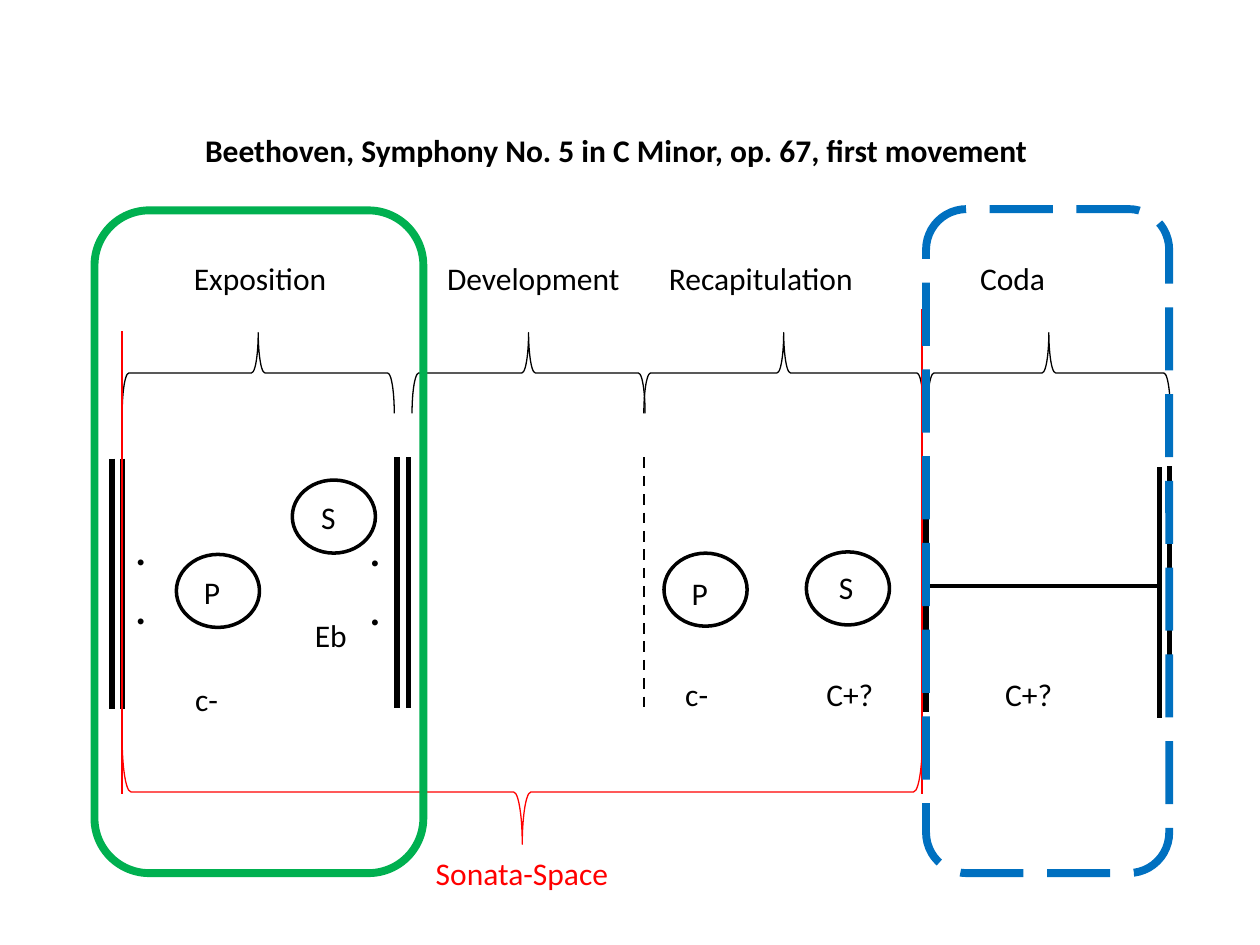
from dataclasses import dataclass

from lxml import etree
from pptx import Presentation
from pptx.dml.color import RGBColor
from pptx.enum.dml import MSO_LINE
from pptx.enum.shapes import MSO_CONNECTOR, MSO_SHAPE
from pptx.oxml.ns import qn
from pptx.util import Inches, Pt

BLACK = RGBColor(0x00, 0x00, 0x00)
RED = RGBColor(0xFF, 0x00, 0x00)
GREEN = RGBColor(0x00, 0xB0, 0x50)
BLUE = RGBColor(0x00, 0x70, 0xC0)
STRAIGHT = MSO_CONNECTOR.STRAIGHT
OVAL = MSO_SHAPE.OVAL
ROUNDED = MSO_SHAPE.ROUNDED_RECTANGLE
BRACE_UP = MSO_SHAPE.RIGHT_BRACE
BRACE_DOWN = MSO_SHAPE.LEFT_BRACE
DASH = MSO_LINE.DASH
LONG_DASH = MSO_LINE.LONG_DASH

FONT = "Calibri"
TEXT_HEIGHT = 0.4
REPEAT_HEIGHT = 1.04
THEME_WIDTH, THEME_HEIGHT = 0.66, 0.58
BRACE_TOP, BRACE_DEPTH = 2.64, 0.64
SPACE_LEFT, SPACE_RIGHT = 0.97, 7.32


@dataclass
class Line:
    x1: float
    y1: float
    x2: float
    y2: float
    weight: float = 3
    color: RGBColor = BLACK
    dash: MSO_LINE | None = None


@dataclass
class Label:
    text: str
    left: float
    top: float
    width: float


BARLINES = [
    Line(0.89, 3.64, 0.89, 5.63),
    Line(0.97, 3.64, 0.97, 5.63),
    Line(3.15, 3.63, 3.15, 5.62),
    Line(3.24, 3.63, 3.24, 5.62),
    Line(7.35, 3.66, 7.35, 5.65),
    Line(5.11, 3.63, 5.11, 5.63, 1.5, dash=DASH),
    Line(7.35, 4.65, 9.2, 4.65, 2.25),
    Line(9.2, 3.71, 9.2, 5.7),
    Line(9.28, 3.7, 9.28, 5.69),
]
SPACE_LIMITS = [
    Line(SPACE_RIGHT, 2.45, SPACE_RIGHT, 6.3, 1, RED),
    Line(SPACE_LEFT, 2.63, SPACE_LEFT, 6.3, 1, RED),
]
REPEAT_DOTS = [Label(".\n.", 0.97, 4.05, 0.34), Label(".\n.", 2.83, 4.06, 0.43)]
SECTION_SPANS = [(0.97, 3.13), (3.27, 5.12), (5.11, 7.33), (7.36, 9.29)]
SECTIONS = "Exposition\tDevelopment\tRecapitulation\tCoda"
SECTION_TABS = (2.01, 3.77, 6.24)
THEME_CIRCLES = [(1.4, 4.4), (2.32, 3.81), (5.27, 4.39), (6.4, 4.38)]
THEMES_AND_KEYS = [
    Label("P", 1.52, 4.5, 0.41),
    Label("P", 5.39, 4.51, 0.41),
    Label("S", 2.45, 3.9, 0.41),
    Label("S", 6.56, 4.46, 0.41),
    Label("Eb", 2.4, 4.84, 0.5),
    Label("c-", 1.45, 5.35, 0.5),
    Label("c-", 5.34, 5.31, 0.5),
    Label("C+?", 6.46, 5.31, 0.6),
    Label("C+?", 7.88, 5.31, 0.6),
]


def add_line(page, line: Line) -> None:
    connector = page.shapes.add_connector(
        STRAIGHT, Inches(line.x1), Inches(line.y1), Inches(line.x2), Inches(line.y2))
    connector.line.color.rgb = line.color
    connector.line.width = Pt(line.weight)
    if line.dash is not None:
        connector.line.dash_style = line.dash
    etree.SubElement(connector._element.spPr, qn("a:effectLst"))


def add_outline(page, kind: MSO_SHAPE, left: float, top: float, width: float,
                height: float, weight: float, color: RGBColor = BLACK,
                dash: MSO_LINE | None = None):
    shape = page.shapes.add_shape(
        kind, Inches(left), Inches(top), Inches(width), Inches(height))
    shape.shadow.inherit = False
    shape.fill.background()
    shape.line.color.rgb = color
    shape.line.width = Pt(weight)
    if dash is not None:
        shape.line.dash_style = dash
    return shape


def add_brace(page, kind: MSO_SHAPE, left: float, right: float, top: float,
              depth: float, color: RGBColor = BLACK) -> None:
    """Lay a brace on its side so that it spans left to right."""
    span = right - left
    brace = add_outline(page, kind, (left + right - depth) / 2,
                        top + (depth - span) / 2, depth, span, 0.75, color)
    brace.rotation = 270


def add_text(page, label: Label, *, height: float = TEXT_HEIGHT, size: float = 18,
             color: RGBColor = BLACK, bold: bool = False,
             tabs: tuple[float, ...] = ()) -> None:
    box = page.shapes.add_textbox(Inches(label.left), Inches(label.top),
                                  Inches(label.width), Inches(height))
    frame = box.text_frame
    frame.word_wrap = True
    frame.text = label.text
    for para in frame.paragraphs:
        para.font.name = FONT
        para.font.size = Pt(size)
        para.font.bold = bold
        para.font.color.rgb = color
        if tabs:
            properties = para._p.get_or_add_pPr()
            stops = etree.Element(qn("a:tabLst"))
            properties.insert(0, stops)
            for position in tabs:
                etree.SubElement(stops, qn("a:tab"), pos=str(Inches(position)), algn="l")


def main() -> None:
    deck = Presentation()
    deck.slide_width, deck.slide_height = Inches(10), Inches(7.5)
    page = deck.slides.add_slide(deck.slide_layouts[6])

    for line in BARLINES:
        add_line(page, line)
    for dots in REPEAT_DOTS:
        add_text(page, dots, height=REPEAT_HEIGHT, size=28)
    for left, right in SECTION_SPANS:
        add_brace(page, BRACE_UP, left, right, BRACE_TOP, BRACE_DEPTH)

    for line in SPACE_LIMITS:
        add_line(page, line)
    add_brace(page, BRACE_DOWN, SPACE_LEFT, SPACE_RIGHT, 5.87, 0.83, RED)
    add_text(page, Label("Sonata-Space", 3.36, 6.73, 1.75), color=RED)

    add_text(page, Label(SECTIONS, 1.44, 2.01, 8.14), tabs=SECTION_TABS)
    for left, top in THEME_CIRCLES:
        add_outline(page, OVAL, left, top, THEME_WIDTH, THEME_HEIGHT, 2)
    for label in THEMES_AND_KEYS:
        add_text(page, label)
    title = "Beethoven, Symphony No. 5 in C Minor, op. 67, first movement"
    add_text(page, Label(title, 1.53, 0.99, 7.17), bold=True)

    add_outline(page, ROUNDED, 0.75, 1.67, 2.61, 5.26, 4.5, GREEN)
    add_outline(page, ROUNDED, 7.35, 1.66, 1.93, 5.27, 4.5, BLUE, LONG_DASH)
    deck.save("out.pptx")


if __name__ == "__main__":
    main()
